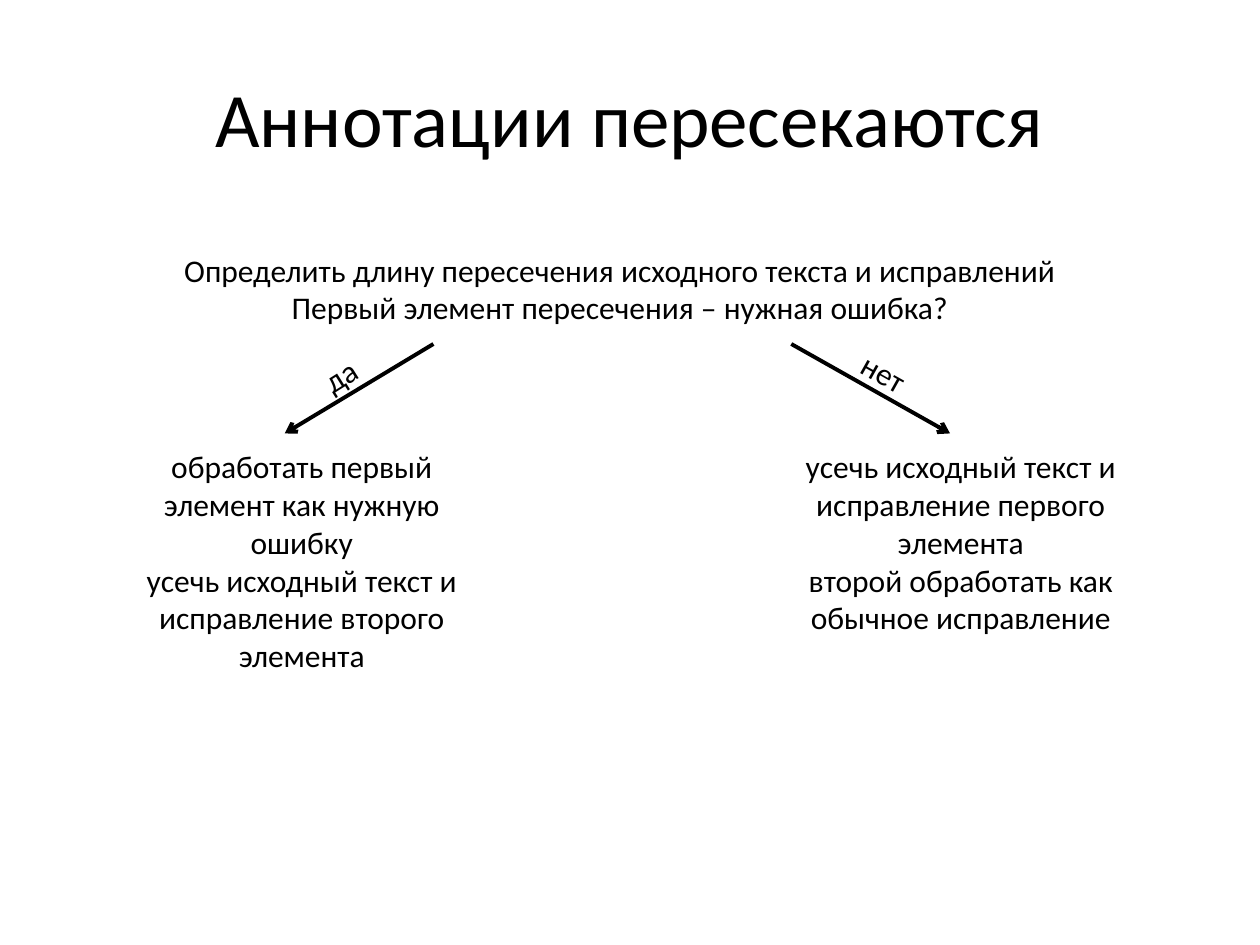
"""Builds a decision slide on handling intersecting annotations."""
from dataclasses import dataclass

from lxml import etree
from pptx import Presentation, util as u
from pptx.dml.color import RGBColor
from pptx.enum import shapes, text
from pptx.oxml.ns import qn
from pptx.slide import Slide
from pptx.text.text import TextFrame

BLACK = RGBColor(0, 0, 0)
WHITE = RGBColor(255, 255, 255)
FONT = "Calibri"
WIDTH, HEIGHT = u.Inches(10), u.Inches(7.5)
COLUMN, ROW = WIDTH / 10, HEIGHT / 7.5
ARROW_TOP, ARROW_BOTTOM = 2.73, 3.44
OUTCOME_TOP, OUTCOME_WIDTH = 3.5, 2.89


@dataclass(frozen=True)
class Caption:
    """Text placed on the grid of columns and rows."""
    lines: tuple[str, ...]
    left: float
    top: float
    width: float
    height: float
    rotation: float = 0
    wrap: bool = False
    align: text.PP_ALIGN = text.PP_ALIGN.CENTER


@dataclass(frozen=True)
class Branch:
    """An answer with its arrow and its outcome."""
    start: float
    end: float
    answer: Caption
    outcome: Caption


QUESTION = Caption(
    ("Определить длину пересечения исходного текста и исправлений",
     "Первый элемент пересечения – нужная ошибка?"),
    1.33, 1.94, 7.18, 0.71)

BRANCHES = (
    Branch(6.28, 7.54,
           Caption(("нет",), 6.74, 2.76, 0.56, 0.4, 29.3, align=text.PP_ALIGN.LEFT),
           Caption(("усечь исходный текст и исправление первого элемента",
                    "второй обработать как обычное исправление"),
                   6.18, OUTCOME_TOP, OUTCOME_WIDTH, 1.62, wrap=True)),
    Branch(3.44, 2.26,
           Caption(("да",), 2.47, 2.78, 0.46, 0.4, 327.9, align=text.PP_ALIGN.LEFT),
           Caption(("обработать первый элемент как нужную ошибку",
                    "усечь исходный текст и исправление второго элемента"),
                   0.95, OUTCOME_TOP, OUTCOME_WIDTH, 1.92, wrap=True)),
)


def across(columns: float) -> u.Emu:
    """Convert columns to a length."""
    return u.Emu(round(columns * COLUMN))


def down(rows: float) -> u.Emu:
    """Convert rows to a length."""
    return u.Emu(round(rows * ROW))


def write(frame: TextFrame, lines: tuple[str, ...], size: float,
          align: text.PP_ALIGN) -> None:
    """Fill a frame with one paragraph per line."""
    for index, line in enumerate(lines):
        paragraph = frame.add_paragraph() if index else frame.paragraphs[0]
        paragraph.alignment = align
        run = paragraph.add_run()
        run.text = line
        run.font.name = FONT
        run.font.size = u.Pt(size)
        run.font.color.rgb = BLACK


def draw_caption(slide: Slide, caption: Caption) -> None:
    """Draw a caption that grows with its text."""
    box = slide.shapes.add_textbox(across(caption.left), down(caption.top),
                                   across(caption.width), down(caption.height))
    box.rotation = caption.rotation
    box.text_frame.word_wrap = caption.wrap
    box.text_frame.auto_size = text.MSO_AUTO_SIZE.SHAPE_TO_FIT_TEXT
    write(box.text_frame, caption.lines, 18, caption.align)


def draw_arrow(slide: Slide, start: float, end: float) -> None:
    """Draw an arrow from the question to an outcome."""
    arrow = slide.shapes.add_connector(
        shapes.MSO_CONNECTOR.STRAIGHT, across(start), down(ARROW_TOP),
        across(end), down(ARROW_BOTTOM))
    arrow.line.color.rgb = BLACK
    arrow.line.width = u.Pt(2.25)
    etree.SubElement(arrow.line._get_or_add_ln(), qn("a:tailEnd"), type="arrow")
    etree.SubElement(arrow._element.spPr, qn("a:effectLst"))


def draw_title(slide: Slide, wording: str) -> None:
    """Place and format the title placeholder."""
    title = slide.shapes.title
    title.left, title.top = across(0.5), down(0.3)
    title.width, title.height = across(9), down(1.25)
    title.text_frame.vertical_anchor = text.MSO_ANCHOR.MIDDLE
    write(title.text_frame, (wording,), 44, text.PP_ALIGN.CENTER)


def main() -> None:
    """Build and save the slide."""
    deck = Presentation()
    deck.slide_width, deck.slide_height = WIDTH, HEIGHT
    slide = deck.slides.add_slide(deck.slide_layouts.get_by_name("Title Only"))
    slide.background.fill.solid()
    slide.background.fill.fore_color.rgb = WHITE
    draw_title(slide, "Аннотации пересекаются")
    draw_caption(slide, QUESTION)
    for branch in BRANCHES:
        draw_arrow(slide, branch.start, branch.end)
        draw_caption(slide, branch.answer)
        draw_caption(slide, branch.outcome)
    deck.save("out.pptx")


if __name__ == "__main__":
    main()
